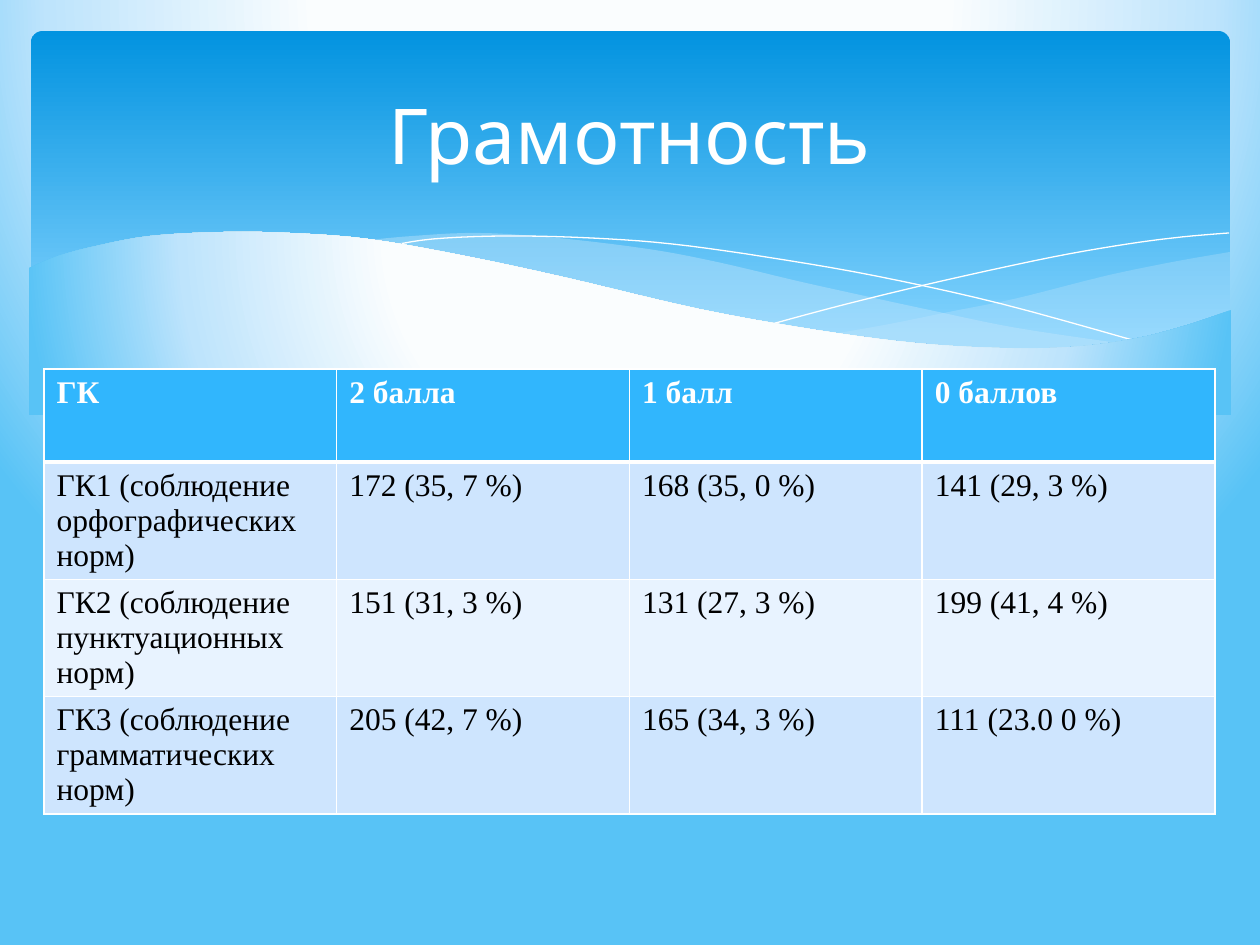
from pptx import Presentation
from pptx import util as u
from pptx.dml.color import RGBColor
from pptx.enum import shapes, text
from pptx.oxml import parse_xml
from pptx.oxml.ns import nsdecls, qn
from lxml import etree

PX = 914400 / 126
color = RGBColor.from_string


def px(value):
    return u.Emu(round(value * PX))


def draw_curves(page, edges, closed):
    points = []
    for knots in edges:
        padded = [knots[0], *knots, knots[-1]]
        for a, b, c, d in zip(padded, padded[1:], padded[2:], padded[3:]):
            for t in (0, 0.2, 0.4, 0.6, 0.8):
                points.append([
                    px(q + t * (r - p + t * (2 * p - 5 * q + 4 * r - s + t * (3 * (q - r) + s - p))) / 2)
                    for p, q, r, s in zip(a, b, c, d)
                ])
        points.append([px(value) for value in knots[-1]])
    builder = page.shapes.build_freeform(*points[0])
    builder.add_line_segments(points[1:], close=closed)
    shape = builder.convert_to_shape()
    shape.shadow.inherit = False
    return shape


deck = Presentation()
deck.slide_width, deck.slide_height = px(1260), px(945)
page = deck.slides.add_slide(deck.slide_layouts[6])

banner = page.shapes.add_shape(shapes.MSO_SHAPE.ROUNDED_RECTANGLE, px(31), px(31), px(1199), px(340))
banner.adjustments[0] = 0.034
banner.shadow.inherit = False
banner.line.fill.background()
banner.fill.gradient()
banner.fill.gradient_angle = 270
for stop, position, tone in zip(banner.fill.gradient_stops, (0, 0.9), ("0293E0", "83D3FE")):
    stop.position = position
    stop.color.rgb = color(tone)

right_wave = [
    [(1230, 252), (1178, 261), (1123, 272), (1085, 281), (1014, 299), (949, 312), (890, 324), (833, 334)],
    [(833, 334), (906, 343), (969, 349), (1026, 350), (1087, 347), (1140, 339), (1187, 326), (1230, 311)],
]
middle_wave = [
    [(1125, 344), (1017, 328), (934, 311), (842, 291), (793, 280), (717, 262), (648, 249),
     (557, 238), (479, 233), (413, 236), (360, 241)],
    [(360, 241), (431, 251), (509, 266), (566, 280), (668, 302), (757, 321), (838, 335),
     (910, 345), (989, 350), (1068, 349), (1125, 344)],
]
for edges, alpha in ((right_wave, 29), (middle_wave, 40)):
    wave = draw_curves(page, edges, True)
    wave.line.fill.background()
    wave.fill.solid()
    wave.fill.fore_color.rgb = color("C6E7FC")
    tint = wave._element.spPr.find(".//" + qn("a:srgbClr"))
    etree.SubElement(tint, qn("a:alpha")).set("val", str(alpha * 1000))

falling_line = [(389, 246), (433, 239), (505, 236), (591, 238), (672, 244), (766, 257),
                (876, 276), (1002, 304), (1143, 343)]
rising_line = [(772, 324), (847, 304), (942, 281), (1053, 257), (1128, 244), (1182, 237), (1229, 233)]
for knots in (falling_line, rising_line):
    strand = draw_curves(page, [knots], False)
    strand.fill.background()
    strand.line.color.rgb = color("FFFFFF")
    strand.line.width = u.Pt(0)

front_wave = draw_curves(page, [
    [(1231, 310), (1184, 326), (1133, 339), (1071, 347), (999, 348), (915, 343), (816, 330),
     (699, 309), (563, 277), (460, 255), (368, 239), (290, 233), (223, 232), (150, 236),
     (96, 246), (58, 256), (29, 268)],
    [(29, 415), (1231, 415)],
], True)
front_wave.line.fill.background()

glow_stops = "".join(
    f'<a:gs pos="{position}000"><a:srgbClr val="{tone}"/></a:gs>'
    for position, tone in ((40, "FAFDFE"), (74, "BEE4FC"), (100, "58C3F6"))
)
for fill, owner in ((page.background.fill, page._element.cSld.bg), (front_wave.fill, front_wave._element.spPr)):
    fill.gradient()
    plain = owner.find(".//" + qn("a:gradFill"))
    plain.getparent().replace(plain, parse_xml(
        f'<a:gradFill {nsdecls("a")} rotWithShape="1"><a:gsLst>{glow_stops}</a:gsLst><a:path path="circle">'
        '<a:fillToRect l="20000" t="-40000" r="20000" b="140000"/></a:path></a:gradFill>'
    ))

rows = [
    ("ГК", "2 балла", "1 балл", "0 баллов"),
    ("ГК1 (соблюдение орфографических норм)", "172 (35, 7 %)", "168 (35, 0 %)", "141 (29, 3 %)"),
    ("ГК2 (соблюдение пунктуационных норм)", "151 (31, 3 %)", "131 (27, 3 %)", "199 (41, 4 %)"),
    ("ГК3 (соблюдение грамматических норм)", "205 (42, 7 %)", "165 (34, 3 %)", "111 (23.0 0 %)"),
]
row_fills = ("31B6FD", "CEE5FE", "E8F3FF", "CEE5FE")
table = page.shapes.add_table(4, 4, px(44), px(369), px(1171), px(372)).table
for i, (row, row_fill) in enumerate(zip(rows, row_fills)):
    for j, words in enumerate(row):
        cell = table.cell(i, j)
        for side in "LRTB":
            points = 3 if (i, side) in ((0, "B"), (1, "T")) else 1
            cell._tc.get_or_add_tcPr().append(parse_xml(
                f'<a:ln{side} {nsdecls("a")} w="{u.Pt(points)}"><a:solidFill>'
                f'<a:srgbClr val="FFFFFF"/></a:solidFill></a:ln{side}>'
            ))
        cell.fill.solid()
        cell.fill.fore_color.rgb = color(row_fill)
        cell.text = words
        font = cell.text_frame.paragraphs[0].font
        font.name, font.size, font.bold = "Times New Roman", u.Pt(18), i == 0
        font.color.rgb = color("000000" if i else "FFFFFF")

box = page.shapes.add_textbox(px(63), px(47), px(1134), px(173))
box.text_frame.word_wrap = True
box.text_frame.vertical_anchor = text.MSO_ANCHOR.MIDDLE
para = box.text_frame.paragraphs[0]
para.text = "Грамотность"
para.alignment = text.PP_ALIGN.CENTER
para.font.name, para.font.size = "Cabin", u.Pt(44)
para.font.color.rgb = color("FFFFFF")

deck.save("out.pptx")
